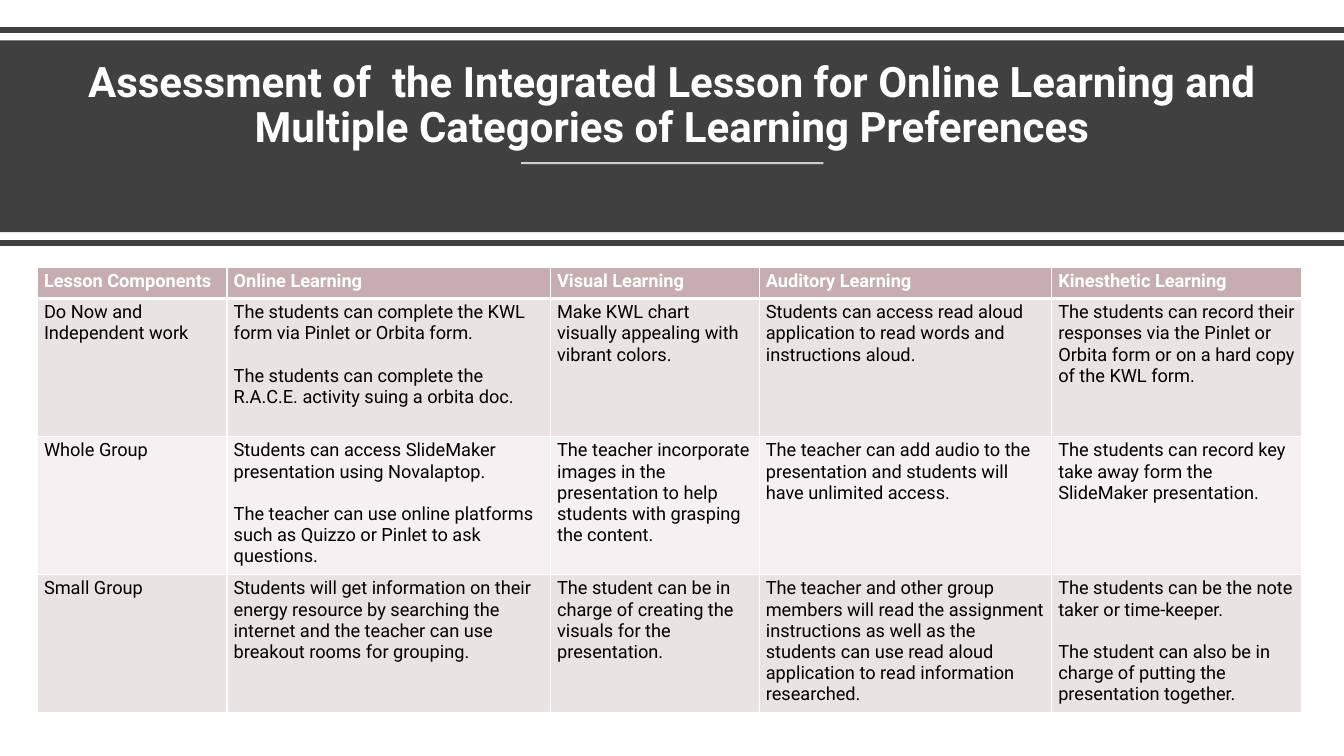
from lxml.etree import SubElement
from pptx import Presentation
from pptx.dml.color import RGBColor
from pptx.enum.shapes import MSO_CONNECTOR, MSO_SHAPE
from pptx.enum.text import MSO_ANCHOR, MSO_AUTO_SIZE, PP_ALIGN
from pptx.oxml import parse_xml
from pptx.oxml.ns import nsdecls, qn
from pptx.util import Cm, Pt

DARK = RGBColor(0x40, 0x40, 0x40)
WHITE = RGBColor(0xFF, 0xFF, 0xFF)
BLACK = RGBColor(0x00, 0x00, 0x00)
ROSE = RGBColor(0xC6, 0xAD, 0xB0)
BLUSH = RGBColor(0xEA, 0xE3, 0xE4)
PALE = RGBColor(0xF5, 0xF1, 0xF2)

WIDTH, HEIGHT = 33.87, 19.05
TITLE = ("Assessment of  the Integrated Lesson for Online Learning and "
         "Multiple Categories of Learning Preferences")
COLS = [4.78, 8.15, 5.26, 7.37, 6.3]
ROWS = [0.79, 3.48, 3.48, 3.48]
# Each line break inside a cell starts a new paragraph
CELLS = [
    ["Lesson Components", "Online Learning", "Visual Learning",
     "Auditory Learning", "Kinesthetic Learning"],
    ["Do Now and Independent work",
     "The students can complete the KWL form via Pinlet or Orbita form.\n"
     "The students can complete the R.A.C.E. activity suing a orbita doc.",
     "Make KWL chart visually appealing with vibrant colors.",
     "Students can access read aloud application to read words and "
     "instructions aloud.",
     "The students can record their responses via the Pinlet or Orbita form "
     "or on a hard copy of the KWL form."],
    ["Whole Group",
     "Students can access SlideMaker presentation using Novalaptop.\n"
     "The teacher can use online platforms such as Quizzo or Pinlet to ask "
     "questions.",
     "The teacher incorporate images in the presentation to help students "
     "with grasping the content.",
     "The teacher can add audio to the presentation and students will have "
     "unlimited access.",
     "The students can record key take away form the SlideMaker "
     "presentation."],
    ["Small Group",
     "Students will get information on their energy resource by searching "
     "the internet and the teacher can use breakout rooms for grouping.",
     "The student can be in charge of creating the visuals for the "
     "presentation.",
     "The teacher and other group members will read the assignment "
     "instructions as well as the students can use read aloud application "
     "to read information researched.",
     "The students can be the note taker or time-keeper.\n"
     "The student can also be in charge of putting the presentation "
     "together."],
]


def apply(item, form):
    for name, value in form.items():
        setattr(item, name, value)


class Deck:
    font = "Roboto"

    def __init__(self):
        self.file = Presentation()
        apply(self.file, {"slide_width": Cm(WIDTH), "slide_height": Cm(HEIGHT)})
        self.slide = self.file.slides.add_slide(self.file.slide_layouts[5])
        self.shapes = self.slide.shapes

    def style(self, run, size, color, bold):
        apply(run.font, {"name": self.font, "size": Pt(size), "bold": bold})
        run.font.color.rgb = color

    def line(self, left, right, y, color, width, alpha=None):
        line = self.shapes.add_connector(
            MSO_CONNECTOR.STRAIGHT, Cm(left), Cm(y), Cm(right), Cm(y))
        line.line.color.rgb = color
        line.line.width = Pt(width)
        props = line.element.spPr
        if alpha:
            tint = next(props.iter(qn("a:srgbClr")))
            SubElement(tint, qn("a:alpha"), val=str(alpha * 1000))
        SubElement(props, qn("a:effectLst"))

    def band(self, top, height, color):
        band = self.shapes.add_shape(
            MSO_SHAPE.RECTANGLE, 0, Cm(top), Cm(WIDTH), Cm(height))
        band.shadow.inherit = False
        band.fill.solid()
        band.fill.fore_color.rgb = color
        band.line.fill.background()

    def title(self, text, left, top, width, height):
        title = self.shapes.title
        # Bring the placeholder in front of the band
        title.element.getparent().append(title.element)
        apply(title, {"left": Cm(left), "top": Cm(top),
                      "width": Cm(width), "height": Cm(height)})
        frame = title.text_frame
        apply(frame, {"text": text, "word_wrap": True,
                      "auto_size": MSO_AUTO_SIZE.NONE,
                      "vertical_anchor": MSO_ANCHOR.BOTTOM})
        para = frame.paragraphs[0]
        apply(para, {"alignment": PP_ALIGN.CENTER, "line_spacing": 0.9,
                     "space_after": Pt(6)})
        self.style(para.runs[0], 30, WHITE, True)

    def edges(self, cell, widths):
        props = cell._tc.get_or_add_tcPr()
        for spot, (side, width) in enumerate(widths.items()):
            props.insert(spot, parse_xml(
                f'<a:ln{side} {nsdecls("a")} w="{Pt(width)}"><a:solidFill>'
                f'<a:srgbClr val="{WHITE}"/></a:solidFill></a:ln{side}>'))

    def cell(self, cell, text, row):
        head = row == 0
        cell.fill.solid()
        cell.fill.fore_color.rgb = ROSE if head else BLUSH if row % 2 else PALE
        apply(cell, {"text": text, "vertical_anchor": MSO_ANCHOR.TOP,
                     "margin_left": Cm(0.17), "margin_right": Cm(0.17),
                     "margin_top": Cm(0.09), "margin_bottom": Cm(0.09)})
        for spot, para in enumerate(cell.text_frame.paragraphs):
            para.space_before = Pt(15 if spot else 0)
            self.style(para.runs[0], 13, WHITE if head else BLACK, head)
        self.edges(cell, {"L": 1, "R": 1, "T": 3 if row == 1 else 1,
                          "B": 3 if head else 1})

    def table(self, left, top, cols, rows, texts):
        table = self.shapes.add_table(
            len(rows), len(cols), Cm(left), Cm(top),
            Cm(sum(cols)), Cm(sum(rows))).table
        for col, width in zip(table.columns, cols):
            col.width = Cm(width)
        for r, height in enumerate(rows):
            table.rows[r].height = Cm(height)
            for c, text in enumerate(texts[r]):
                self.cell(table.cell(r, c), text, r)


def main():
    deck = Deck()
    # Header band between two rules
    deck.line(0, WIDTH, 0.76, DARK, 4)
    deck.band(1.02, 4.83, DARK)
    deck.title(TITLE, 1.47, 1.37, 30.94, 2.59)
    deck.line(13.13, 20.75, 4.11, WHITE, 1.5, alpha=75)
    deck.line(0, WIDTH, 6.12, DARK, 4)
    # Lesson table
    deck.table(0.94, 6.73, COLS, ROWS, CELLS)
    deck.file.save("out.pptx")


if __name__ == "__main__":
    main()
